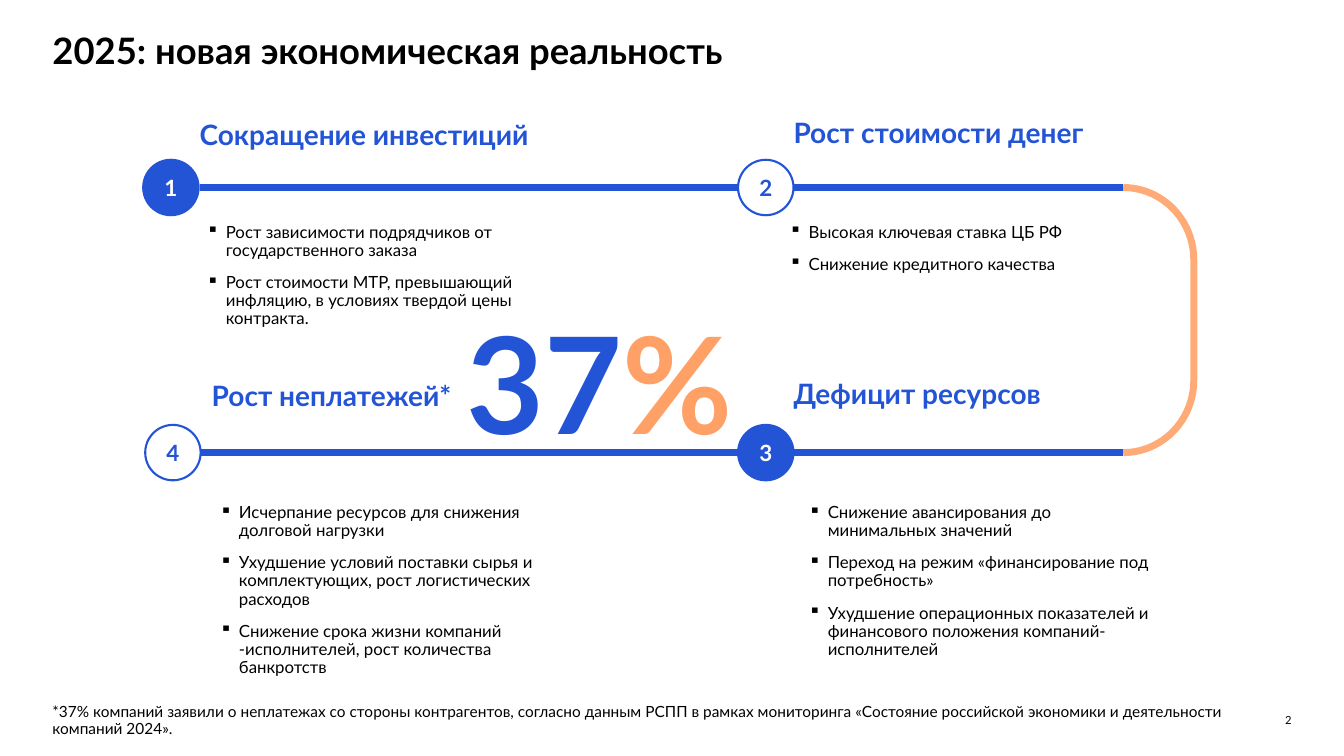
from dataclasses import dataclass

from lxml import etree
from pptx import Presentation
from pptx.dml.color import RGBColor
from pptx.enum import shapes as sh, text as tx
from pptx.oxml import ns
from pptx.util import Inches, Pt


@dataclass(frozen=True)
class Theme:
    font: str = "Lato"
    ink: str = "000000"
    paper: str = "FFFFFF"
    blue: str = "2354D6"
    peach: str = "FFAB78"
    orange: str = "FFA066"
    title: int = 26
    head: int = 20
    node: int = 16
    body: int = 12
    note: int = 11
    page: int = 8
    figure: int = 96
    track: int = 5
    ring: float = 1.5


T = Theme()
NODE = 0.55
ROWS = (1.86, 4.49)
TURN = 11.14

# Number, node left, row, filled, heading box, list box, heading, points
STEPS = [
    ("1", 1.42, 0, True, (1.98, 1.1, 3.56, 0.4), (2.05, 2.22, 3.49, 1.05),
     "Сокращение инвестиций",
     ["Рост зависимости подрядчиков от государственного заказа",
      "Рост стоимости МТР, превышающий инфляцию, в условиях твердой цены контракта."]),
    ("2", 7.32, 0, False, (7.87, 1.08, 3.19, 0.4), (7.83, 2.22, 3.49, 0.83),
     "Рост стоимости денег",
     ["Высокая ключевая ставка ЦБ РФ",
      "Снижение кредитного качества"]),
    ("3", 7.32, 1, True, (7.87, 3.67, 2.81, 0.4), (8.02, 5, 3.49, 1.55),
     "Дефицит ресурсов",
     ["Снижение авансирования до минимальных значений",
      "Переход на режим «финансирование под потребность»",
      "Ухудшение операционных показателей и финансового положения компаний-исполнителей"]),
    ("4", 1.44, 1, False, (2.1, 3.69, 2.69, 0.37), (2.18, 5, 3.49, 1.73),
     "Рост неплатежей*",
     ["Исчерпание ресурсов для снижения долговой нагрузки",
      "Ухудшение условий поставки сырья и комплектующих, рост логистических расходов",
      "Снижение срока жизни компаний -исполнителей, рост количества банкротств"]),
]


def rgb(code):
    return RGBColor.from_string(code)


def place(box):
    return [Inches(n) for n in box]


def add_run(para, words, size, color, bold=False):
    run = para.add_run()
    run.text = words
    font = run.font
    font.name, font.size, font.bold = T.font, Pt(size), bold
    font.color.rgb = rgb(color)


def set_frame(frame, anchor=tx.MSO_ANCHOR.TOP):
    """Clear the insets, wrap the text, and return the first paragraph."""
    frame.word_wrap = True
    frame.auto_size = tx.MSO_AUTO_SIZE.NONE
    frame.vertical_anchor = anchor
    frame.margin_left = frame.margin_right = 0
    frame.margin_top = frame.margin_bottom = 0
    return frame.paragraphs[0]


def add_text(slide, box, anchor=tx.MSO_ANCHOR.TOP):
    return set_frame(slide.shapes.add_textbox(*place(box)).text_frame, anchor)


def add_title(slide, box, words):
    title = slide.shapes.title
    title.left, title.top, title.width, title.height = place(box)
    para = set_frame(title.text_frame)
    para.alignment = tx.PP_ALIGN.LEFT
    para.line_spacing = 1.0
    add_run(para, words, T.title, T.ink, True)


def add_line(slide, left, right, y):
    line = slide.shapes.add_connector(
        sh.MSO_CONNECTOR.STRAIGHT, *place((left, y, right, y)))
    line.line.color.rgb = rgb(T.blue)
    line.line.width = Pt(T.track)
    etree.SubElement(line._element.spPr, ns.qn("a:effectLst"))


def add_turn(slide, box):
    """Join the ends of the two rows with a rounded bracket."""
    turn = slide.shapes.add_shape(sh.MSO_SHAPE.LEFT_BRACKET, *place(box))
    turn.adjustments[0] = 1.025
    turn.rotation = 180
    turn.shadow.inherit = False
    turn.fill.background()
    turn.line.color.rgb = rgb(T.peach)
    turn.line.width = Pt(T.track)


def add_node(slide, left, y, label, filled):
    node = slide.shapes.add_shape(
        sh.MSO_SHAPE.ROUNDED_RECTANGLE, *place((left, y - NODE / 2, NODE, NODE)))
    node.adjustments[0] = 0.5
    node.shadow.inherit = False
    node.fill.solid()
    node.fill.fore_color.rgb = rgb(T.blue if filled else T.paper)
    node.line.color.rgb = rgb(T.blue)
    node.line.width = Pt(T.ring)
    para = set_frame(node.text_frame, tx.MSO_ANCHOR.MIDDLE)
    para.alignment = tx.PP_ALIGN.CENTER
    add_run(para, label, T.node, T.paper if filled else T.blue, True)


def add_list(slide, box, points):
    para = add_text(slide, box)
    frame = para._parent
    for i, point in enumerate(points):
        if i:
            para = frame.add_paragraph()
            para.space_before = Pt(10)
        para.line_spacing = 0.9
        props = para._p.get_or_add_pPr()
        props.set("marL", str(Inches(0.19)))
        props.set("indent", str(Inches(-0.19)))
        etree.SubElement(props, ns.qn("a:buChar"), char="▪")
        add_run(para, point, T.body, T.ink)


def add_step(slide, label, left, row, filled, head, area, words, points):
    add_node(slide, left, ROWS[row], label, filled)
    para = add_text(slide, head)
    para.line_spacing = 1.2
    add_run(para, words, T.head, T.blue, True)
    add_list(slide, area, points)


def add_track(slide):
    top, low = ROWS
    add_turn(slide, (TURN, top, 0.7, low - top))
    for y in ROWS:
        add_line(slide, 1.98, 7.32, y)
        add_line(slide, 7.87, TURN, y)


def add_figure(slide, box):
    para = add_text(slide, box, tx.MSO_ANCHOR.MIDDLE)
    add_run(para, "37", T.figure, T.blue, True)
    add_run(para, "%", T.figure, T.orange, True)


def add_foot(slide, box, page):
    para = add_text(slide, box)
    para.line_spacing = 0.9
    add_run(para, "*37% компаний заявили о неплатежах со стороны контрагентов, "
            "согласно данным РСПП в рамках мониторинга «Состояние российской "
            "экономики и деятельности компаний 2024».", T.note, T.ink)
    para = add_text(slide, page, tx.MSO_ANCHOR.BOTTOM)
    para.alignment = tx.PP_ALIGN.RIGHT
    add_run(para, "2", T.page, T.ink)


def main():
    deck = Presentation()
    deck.slide_width, deck.slide_height = Inches(13.33), Inches(7.5)
    slide = deck.slides.add_slide(deck.slide_layouts[5])
    add_title(slide, (0.52, 0.28, 10.16, 1.31), "2025: новая экономическая реальность")
    add_track(slide)
    for step in STEPS:
        add_step(slide, *step)
    add_foot(slide, (0.52, 6.99, 11.72, 0.33), (12.24, 7.08, 0.57, 0.13))
    add_figure(slide, (4.63, 2.48, 3.64, 2.6))
    deck.save("out.pptx")


if __name__ == "__main__":
    main()
